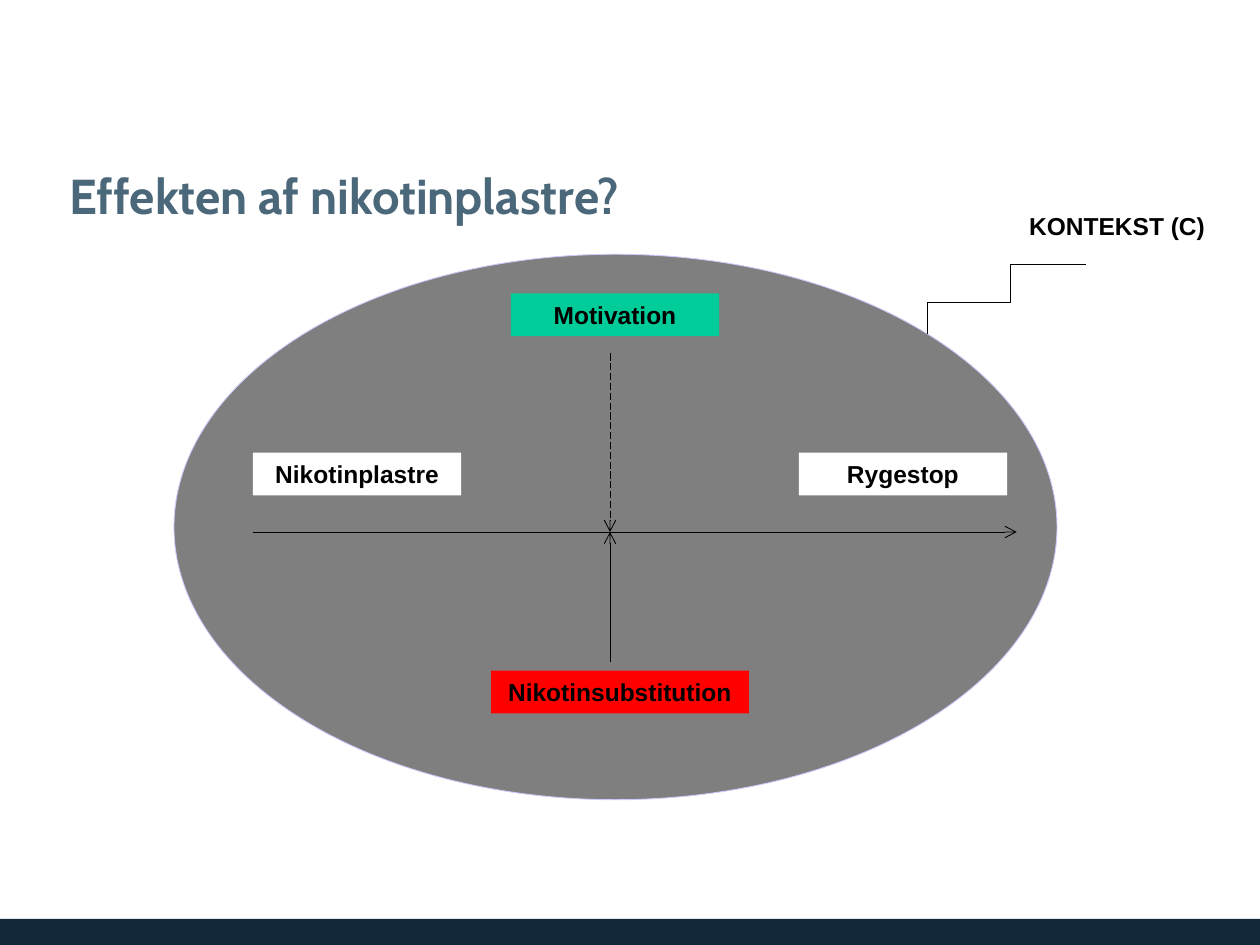
from pptx import Presentation
from pptx.dml.color import RGBColor
from pptx.enum.dml import MSO_LINE
from pptx.enum.shapes import MSO_CONNECTOR, MSO_SHAPE
from pptx.enum.text import MSO_ANCHOR, MSO_AUTO_SIZE, PP_ALIGN
from pptx.oxml.ns import qn
from pptx.util import Pt
from lxml.etree import SubElement

NAVY = RGBColor(0x14, 0x28, 0x3C)
SLATE = RGBColor(0x4B, 0x67, 0x7A)
BLACK = RGBColor(0, 0, 0)
WHITE = RGBColor(255, 255, 255)
LILAC = RGBColor(0xCC, 0xCC, 0xFF)
RED = RGBColor(255, 0, 0)
GREEN = RGBColor(0, 0xCC, 0x99)


class Canvas:
    font, size, thin = "Arial", Pt(14), Pt(0.5)
    height = 24.5  # label height

    def __init__(self, slide):
        self.slide = slide

    def title(self, text, x, y, w, h):
        box = self.slide.shapes.title
        box.left, box.top, box.width, box.height = map(Pt, (x, y, w, h))
        frame = box.text_frame
        frame.text = text
        frame.vertical_anchor = MSO_ANCHOR.MIDDLE
        frame.margin_left, frame.margin_right = Pt(3), Pt(6)
        para = frame.paragraphs[0]
        para.alignment = PP_ALIGN.LEFT
        font = para.font
        font.name, font.size, font.bold = "Cabin", Pt(28), True
        font.color.rgb = SLATE

    def shape(self, kind, x, y, w, h, fill, line=None, alpha=None):
        item = self.slide.shapes.add_shape(kind, *map(Pt, (x, y, w, h)))
        item.shadow.inherit = False
        item.fill.solid()
        item.fill.fore_color.rgb = fill
        if alpha:
            color = item.fill._xPr.find(qn("a:solidFill"))[0]
            SubElement(color, qn("a:alpha"), val=str(alpha * 1000))
        if line is None:
            item.line.fill.background()
        else:
            self.stroke(item.line, line)
        return item

    def label(self, text, x, y, w, fill, align=PP_ALIGN.CENTER):
        item = self.shape(MSO_SHAPE.RECTANGLE, x, y, w, self.height, fill)
        frame = item.text_frame
        frame.text = text
        frame.word_wrap = True
        frame.auto_size = MSO_AUTO_SIZE.SHAPE_TO_FIT_TEXT
        frame.vertical_anchor = MSO_ANCHOR.TOP
        para = frame.paragraphs[0]
        para.alignment = align
        font = para.font
        font.name, font.size, font.bold = self.font, self.size, True
        font.color.rgb = BLACK

    def stroke(self, line, color):
        line.color.rgb = color
        line.width = self.thin

    def arrow(self, x1, y1, x2, y2, dash=None):
        item = self.slide.shapes.add_connector(
            MSO_CONNECTOR.STRAIGHT, *map(Pt, (x1, y1, x2, y2)))
        self.stroke(item.line, BLACK)
        if dash:
            item.line.dash_style = dash
        SubElement(item.line._get_or_add_ln(), qn("a:tailEnd"), type="arrow")
        SubElement(item._element.spPr, qn("a:effectLst"))

    def steps(self, first, *rest):
        pen = self.slide.shapes.build_freeform(*map(Pt, first))
        pen.add_line_segments([tuple(map(Pt, p)) for p in rest], close=False)
        item = pen.convert_to_shape()
        item.shadow.inherit = False
        item.fill.background()
        self.stroke(item.line, BLACK)


def main():
    deck = Presentation()
    deck.slide_width, deck.slide_height = Pt(720), Pt(540)
    art = Canvas(deck.slides.add_slide(deck.slide_layouts[5]))

    # Footer band and title
    art.shape(MSO_SHAPE.RECTANGLE, 0, 525, 720, 15, NAVY)
    art.title("Effekten af nikotinplastre?", 36.7, 84.2, 647.3, 54)

    # Context field
    art.shape(MSO_SHAPE.OVAL, 99.4, 145.3, 504.6, 311.7, BLACK, LILAC, 50)

    # Arrows: cause to effect, with two mechanisms meeting it
    mid_x, mid_y = 348.6, 304
    art.arrow(144.7, mid_y, 581, mid_y)
    art.arrow(mid_x, 378, mid_x, mid_y)
    art.arrow(mid_x, 202, mid_x, mid_y, MSO_LINE.LONG_DASH)

    # Labels
    wide = 119
    art.label("Nikotinplastre", 144.6, 258.6, wide, WHITE)
    art.label("Rygestop", 456.5, 258.6, wide, WHITE)
    art.label("Nikotinsubstitution", 280.6, 383.2, 147.4, RED)
    art.label("Motivation", 292, 167.7, wide, GREEN)

    # Stepped leader to the context label
    art.steps((530, 190.6), (530, 172.8), (577.4, 172.8),
              (577.4, 151.2), (620.6, 151.2))
    art.label("KONTEKST (C)", 581, 116.8, wide, WHITE, PP_ALIGN.LEFT)

    deck.save("out.pptx")


if __name__ == "__main__":
    main()
